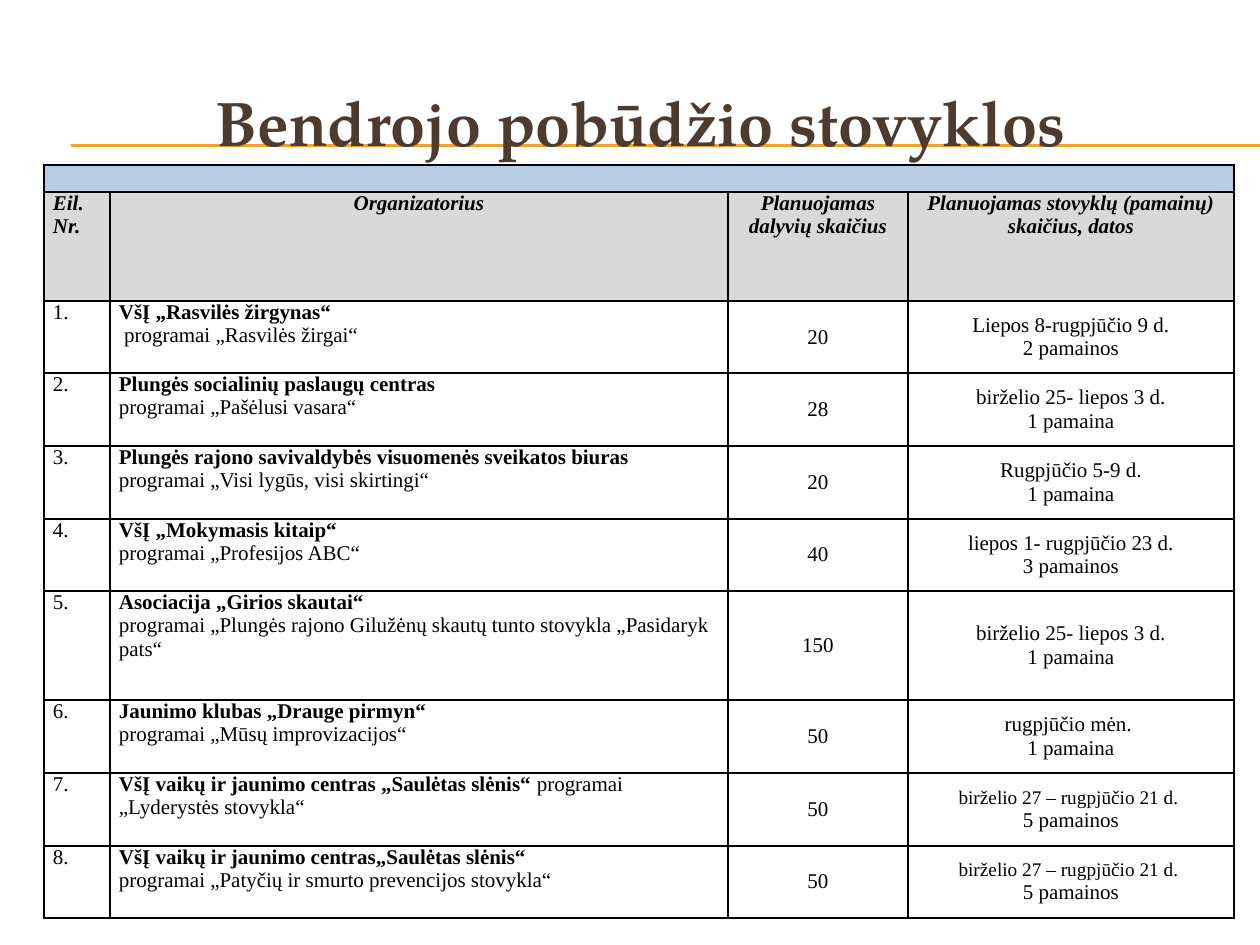
from lxml import etree
from pptx import Presentation
from pptx.dml.color import RGBColor
from pptx.enum.shapes import MSO_CONNECTOR
from pptx.enum.text import MSO_ANCHOR, PP_ALIGN
from pptx.oxml import parse_xml
from pptx.oxml.ns import nsdecls, qn
from pptx.util import Pt

LEFT, CENTER = PP_ALIGN.LEFT, PP_ALIGN.CENTER
TOP, MIDDLE = MSO_ANCHOR.TOP, MSO_ANCHOR.MIDDLE
STRAIGHT = MSO_CONNECTOR.STRAIGHT
PX = 914400 / 126


def color(value):
    return RGBColor.from_string(value)


def write(frame, lines, align, font="Times New Roman", ink="000000"):
    for index, line in enumerate(lines):
        paragraph = frame.paragraphs[0] if index == 0 else frame.add_paragraph()
        paragraph.alignment = align
        for text, size, bold, italic in line:
            run = paragraph.add_run()
            run.text = text
            run.font.name = font
            run.font.size = Pt(size)
            run.font.bold = bold
            run.font.italic = italic
            run.font.color.rgb = color(ink)


prs = Presentation()
prs.slide_width = round(1260 * PX)
prs.slide_height = round(945 * PX)
slide = prs.slides.add_slide(prs.slide_layouts[6])

for y in (145, 146):
    rule = slide.shapes.add_connector(
        STRAIGHT, round(71 * PX), round(y * PX), round(1260 * PX), round(y * PX))
    rule.line.color.rgb = color("F0A22E")
    rule.line.width = Pt(0.75)
    etree.SubElement(rule._element.spPr, qn("a:effectLst"))

title = slide.shapes.add_textbox(
    round(42 * PX), round(63 * PX), round(1197 * PX), round(116 * PX)).text_frame
title.word_wrap = True
title.vertical_anchor = MIDDLE
write(title, [[("Bendrojo pobūdžio stovyklos", 36, True, False)]], CENTER,
      "TeX Gyre Pagella", "4E3B30")

headings = ["Eil. Nr.", "Organizatorius", "Planuojamas dalyvių skaičius",
            "Planuojamas stovyklų (pamainų) skaičius, datos"]
camps = [
    ([[("VšĮ „Rasvilės žirgynas“", True)], [(" programai „Rasvilės žirgai“", False)]],
     "20", "Liepos 8-rugpjūčio 9 d.", "2 pamainos", 12),
    ([[("Plungės socialinių paslaugų centras", True)],
      [("programai „Pašėlusi vasara“", False)]],
     "28", "birželio 25- liepos 3 d.", "1 pamaina", 12),
    ([[("Plungės rajono savivaldybės visuomenės sveikatos biuras", True)],
      [("programai „Visi lygūs, visi skirtingi“", False)]],
     "20", "Rugpjūčio 5-9 d.", "1 pamaina", 12),
    ([[("VšĮ „Mokymasis kitaip“", True)], [("programai „Profesijos ABC“", False)]],
     "40", "liepos 1- rugpjūčio 23 d.", "3 pamainos", 12),
    ([[("Asociacija „Girios skautai“", True)],
      [("programai „Plungės rajono Gilužėnų skautų tunto stovykla „Pasidaryk pats“",
        False)]],
     "150", "birželio 25- liepos 3 d.", "1 pamaina", 12),
    ([[("Jaunimo klubas „Drauge pirmyn“", True)],
      [("programai „Mūsų improvizacijos“", False)]],
     "50", "rugpjūčio mėn. ", "1 pamaina", 12),
    ([[("VšĮ vaikų ir jaunimo centras „Saulėtas slėnis“ ", True),
       ("programai „Lyderystės stovykla“", False)]],
     "50", "birželio 27 – rugpjūčio 21 d. ", "5 pamainos", 11),
    ([[("VšĮ vaikų ir jaunimo centras„Saulėtas slėnis“", True)],
      [("programai „Patyčių ir smurto prevencijos stovykla“", False)]],
     "50", "birželio 27 – rugpjūčio 21 d. ", "5 pamainos", 11),
]

column_widths = [66, 618, 180, 326]
row_edges = [165, 192, 301, 373, 446, 519, 591, 700, 773, 846, 918]
row_heights = [low - high for high, low in zip(row_edges, row_edges[1:])]
schedule = slide.shapes.add_table(
    len(row_heights), len(column_widths), round(44 * PX), round(row_edges[0] * PX),
    round(sum(column_widths) * PX), round(sum(row_heights) * PX)).table
for column, width in zip(schedule.columns, column_widths):
    column.width = round(width * PX)
for row, height in zip(schedule.rows, row_heights):
    row.height = round(height * PX)

for row_index in range(len(row_heights)):
    for cell in schedule.rows[row_index].cells:
        cell.margin_left = cell.margin_right = round(9 * PX)
        cell.margin_top = cell.margin_bottom = 0
        properties = cell._tc.get_or_add_tcPr()
        for side in ("lnL", "lnR", "lnT", "lnB"):
            properties.append(parse_xml(
                f'<a:{side} {nsdecls("a")} w="12700"><a:solidFill>'
                f'<a:srgbClr val="000000"/></a:solidFill></a:{side}>'))
        cell.fill.solid()
        cell.fill.fore_color.rgb = color({0: "B8CCE4", 1: "D9D9D9"}.get(row_index, "FFFFFF"))

for cell in schedule.rows[0].cells:
    etree.SubElement(cell.text_frame.paragraphs[0]._p, qn("a:endParaRPr"), sz="1200")
schedule.cell(0, 0).merge(schedule.cell(0, 3))

for index, heading in enumerate(headings):
    write(schedule.cell(1, index).text_frame, [[(heading, 12, True, True)]],
          CENTER if index else LEFT)

for number, (organizer, places, dates, shifts, date_size) in enumerate(camps, 1):
    entries = [
        ([[(f"{number}.", 12, False, False)]], LEFT, TOP),
        ([[(text, 12, bold, False) for text, bold in line] for line in organizer], LEFT, TOP),
        ([[(places, 12, False, False)]], CENTER, MIDDLE),
        ([[(dates, date_size, False, False)], [(shifts, 12, False, False)]], CENTER, MIDDLE),
    ]
    for cell, (lines, align, anchor) in zip(schedule.rows[number + 1].cells, entries):
        cell.vertical_anchor = anchor
        write(cell.text_frame, lines, align)

prs.save("out.pptx")
